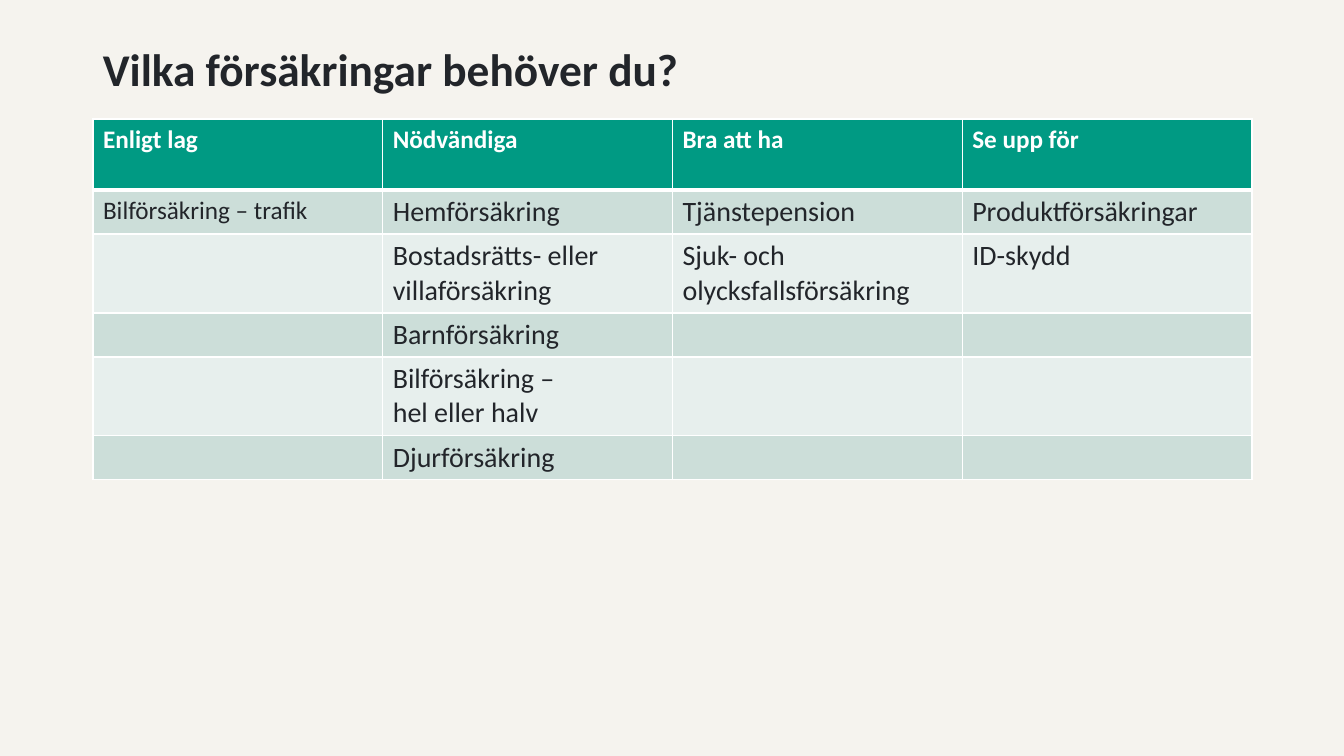
from lxml.etree import SubElement
from pptx import Presentation
from pptx.dml.color import RGBColor
from pptx.enum.text import MSO_ANCHOR as Anchor
from pptx.oxml.ns import qn
from pptx.util import Pt

SCALE = 914400 / 100.8
FONT = "Calibri"
PAPER = RGBColor(0xF5, 0xF3, 0xEE)
INK = RGBColor(0x22, 0x25, 0x2A)
WHITE = RGBColor(0xFF, 0xFF, 0xFF)
GREEN = RGBColor(0x00, 0x9A, 0x83)
BANDS = [RGBColor(0xCC, 0xDE, 0xD9), RGBColor(0xE7, 0xEF, 0xED)]

TITLE = "Vilka försäkringar behöver du?"
ROW_HEIGHTS = [71, 44, 79, 44, 79, 44]
INSURANCES = [
    ["Enligt lag", "Nödvändiga", "Bra att ha", "Se upp för"],
    ["Bilförsäkring – trafik", "Hemförsäkring", "Tjänstepension", "Produktförsäkringar"],
    ["", "Bostadsrätts- eller villaförsäkring", "Sjuk- och olycksfallsförsäkring", "ID-skydd"],
    ["", "Barnförsäkring", "", ""],
    ["", "Bilförsäkring –\vhel eller halv", "", ""],
    ["", "Djurförsäkring", "", ""],
]


def px(length):
    """Turn px into EMU."""
    return round(length * SCALE)


def style_text(para, size, color, bold):
    """Format every run of a paragraph."""
    for span in para.runs:
        span.font.name = FONT
        span.font.size = Pt(size)
        span.font.bold = bold
        span.font.color.rgb = color


def add_title(page, left, top, width, height):
    """Place the heading in the given box."""
    box = page.shapes.add_textbox(px(left), px(top), px(width), px(height))
    frame = box.text_frame
    frame.word_wrap = True
    frame.vertical_anchor = Anchor.MIDDLE
    frame.text = TITLE
    para = frame.paragraphs[0]
    para.line_spacing = 0.9
    style_text(para, 32.4, INK, True)


def add_borders(cell, widths):
    """Draw white cell borders, with widths in points by side."""
    properties = cell._tc.get_or_add_tcPr()
    for side, width in widths.items():
        line = SubElement(properties, qn(f"a:ln{side}"), w=str(Pt(width)))
        fill = SubElement(line, qn("a:solidFill"))
        SubElement(fill, qn("a:srgbClr"), val=str(WHITE))


def add_insurance_table(page, left, top, width):
    """Place the insurance table at the given corner and width."""
    columns = len(INSURANCES[0])
    frame = page.shapes.add_table(len(INSURANCES), columns, px(left), px(top),
                                  px(width), px(sum(ROW_HEIGHTS)))
    table = frame.table
    for column in table.columns:
        column.width = px(width / columns)
    for i, texts in enumerate(INSURANCES):
        table.rows[i].height = px(ROW_HEIGHTS[i])
        header = i == 0
        for j, text in enumerate(texts):
            cell = table.cell(i, j)
            add_borders(cell, {"L": 1, "R": 1, "T": 3 if i == 1 else 1, "B": 3 if header else 1})
            cell.fill.solid()
            cell.fill.fore_color.rgb = GREEN if header else BANDS[(i - 1) % 2]
            para = cell.text_frame.paragraphs[0]
            para.text = text
            size = 18 if header or j == 0 else 20
            style_text(para, size, WHITE if header else INK, header)


def main():
    """Build and save the deck."""
    deck = Presentation()
    deck.slide_width, deck.slide_height = px(1344), px(756)
    page = deck.slides.add_slide(deck.slide_layouts[6])
    page.background.fill.solid()
    page.background.fill.fore_color.rgb = PAPER
    add_title(page, 93, 40, 1159, 63)
    add_insurance_table(page, 93, 119, 1159)
    deck.save("out.pptx")


if __name__ == "__main__":
    main()
